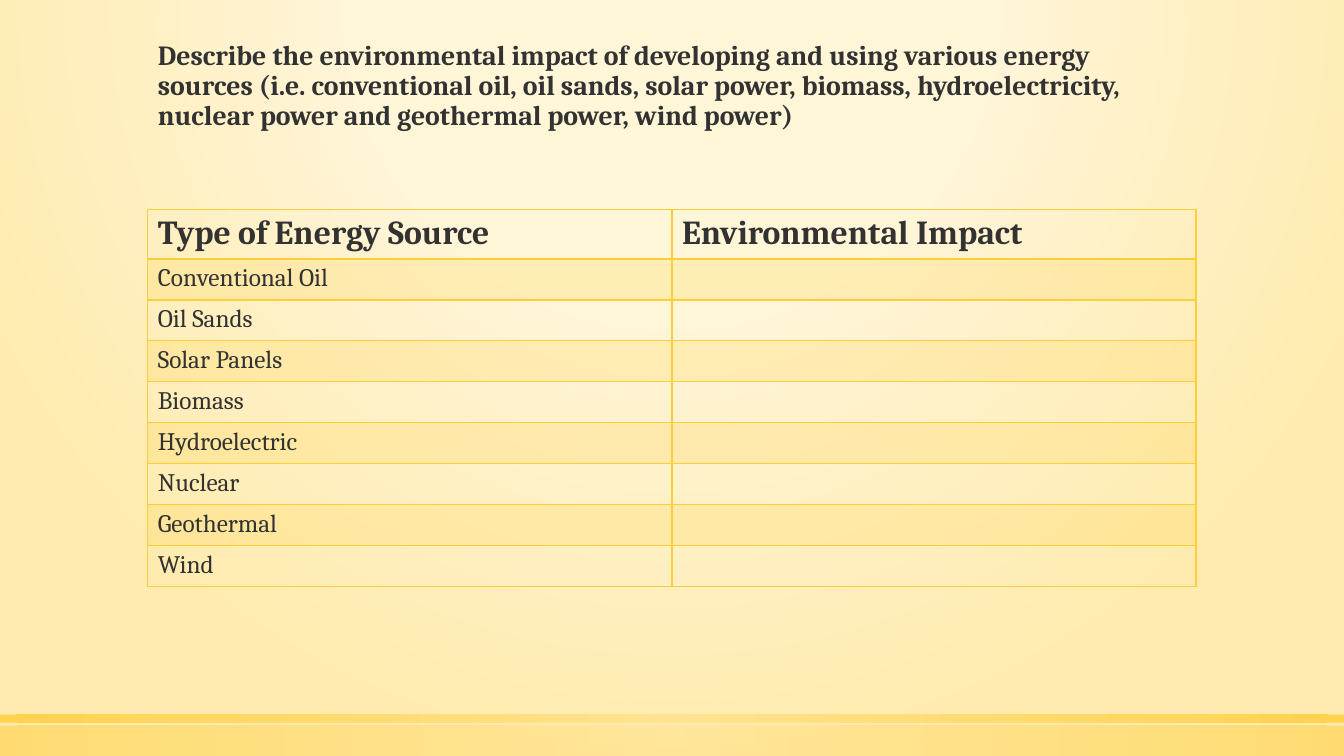
from lxml import etree
from pptx import Presentation
from pptx import util as u
from pptx.dml.color import RGBColor
from pptx.enum import shapes, text
from pptx.oxml.ns import qn

GOLD, PALE_GOLD, INK = "FFCD36", "FFE186", "323232"
CREAM, SAND = "FFF5D7", "FFEBAF"
TITLE = ("Describe the environmental impact of developing and using various energy "
         "sources (i.e. conventional oil, oil sands, solar power, biomass, "
         "hydroelectricity, nuclear power and geothermal power, wind power)")
HEADINGS = ["Type of Energy Source", "Environmental Impact"]
SOURCES = ["Conventional Oil", "Oil Sands", "Solar Panels", "Biomass",
           "Hydroelectric", "Nuclear", "Geothermal", "Wind"]


def rgb(colour):
    return RGBColor.from_string(colour)


def add_colour(parent, colour, alpha=100):
    element = etree.SubElement(parent, qn("a:srgbClr"), val=colour)
    if alpha < 100:
        etree.SubElement(element, qn("a:alpha"), val=str(alpha * 1000))


class EnergySlide:
    """Places elements on a grid of 100 columns by 100 rows."""

    font = "Cambria"

    def __init__(self, deck):
        self.deck = deck
        self.page = deck.slides.add_slide(deck.slide_layouts[5])

    def place(self, left, top, width, height):
        across, down = self.deck.slide_width / 100, self.deck.slide_height / 100
        return [round(length) for length in
                (left * across, top * down, width * across, height * down)]

    def style(self, para, size, bold=False):
        para.alignment = text.PP_ALIGN.LEFT
        for span in para.runs:
            span.font.name = self.font
            span.font.size = u.Pt(size)
            span.font.bold = bold
            span.font.color.rgb = rgb(INK)

    def radial(self, owner, stops, top=50, bottom=50):
        """Swap the solid fill of a properties element for a circular gradient."""
        gradient = etree.Element(qn("a:gradFill"), rotWithShape="1")
        stop_list = etree.SubElement(gradient, qn("a:gsLst"))
        for position, colour, alpha in stops:
            stop = etree.SubElement(stop_list, qn("a:gs"), pos=str(position * 1000))
            add_colour(stop, colour, alpha)
        circle = etree.SubElement(gradient, qn("a:path"), path="circle")
        etree.SubElement(circle, qn("a:fillToRect"), l="50000", t=str(top * 1000),
                         r="50000", b=str(bottom * 1000))
        owner.replace(owner.find(qn("a:solidFill")), gradient)

    def background(self):
        self.page.background.fill.solid()
        owner = self.page.element.find(".//" + qn("p:bgPr"))
        self.radial(owner, [(0, CREAM, 59), (40, CREAM, 66), (100, SAND, 100)], -80, 180)

    def band(self, top, height, alpha):
        box = self.page.shapes.add_shape(shapes.MSO_SHAPE.RECTANGLE,
                                         *self.place(0, top, 100, height))
        box.shadow.inherit = False
        box.line.fill.background()
        box.fill.solid()
        self.radial(box.element.spPr, [(0, PALE_GOLD, alpha), (100, GOLD, alpha)])

    def title(self, wording, *area):
        box = self.page.shapes.title
        box.left, box.top, box.width, box.height = self.place(*area)
        frame = box.text_frame
        frame.text = wording
        frame.word_wrap = True
        frame.auto_size = text.MSO_AUTO_SIZE.NONE
        frame.vertical_anchor = text.MSO_ANCHOR.BOTTOM
        frame.margin_top, frame.margin_bottom = 0, u.Inches(0.56)
        para = frame.paragraphs[0]
        para.line_spacing = 0.9
        self.style(para, 19.8, bold=True)

    def borders(self, cell, **widths):
        properties = cell._tc.get_or_add_tcPr()
        for side, width in widths.items():
            line = etree.SubElement(properties, qn("a:ln" + side), w=str(u.Pt(width)))
            add_colour(etree.SubElement(line, qn("a:solidFill")), GOLD)

    def table(self, rows, header_height, *area):
        left, top, width, height = self.place(*area)
        table = self.page.shapes.add_table(len(rows), len(rows[0]),
                                           left, top, width, height).table
        table.horz_banding = False
        header = u.Inches(header_height)
        for index, wordings in enumerate(rows):
            is_header = index == 0
            table.rows[index].height = (header if is_header else
                                        (height - header) // (len(rows) - 1))
            for column, wording in enumerate(wordings):
                cell = table.cell(index, column)
                cell.text = wording
                self.style(cell.text_frame.paragraphs[0], 24 if is_header else 18, is_header)
                self.borders(cell, L=1, R=1, T=2 if index == 1 else 1,
                             B=2 if is_header else 1)
                if index % 2:
                    cell.fill.solid()
                    cell.fill.fore_color.rgb = rgb(GOLD)
                    tint = cell._tc.tcPr.find(qn("a:solidFill"))[0]
                    etree.SubElement(tint, qn("a:alpha"), val="20000")
                else:
                    cell.fill.background()


def main():
    deck = Presentation()
    deck.slide_width, deck.slide_height = u.Inches(13.33), u.Inches(7.5)
    slide = EnergySlide(deck)
    slide.background()
    slide.band(96, 4, alpha=50)
    slide.band(94.53, 1.07, alpha=80)
    slide.title(TITLE, 11, 6.8, 78, 18)
    rows = [HEADINGS] + [[source, ""] for source in SOURCES]
    slide.table(rows, 0.49, 11, 27.73, 78, 49.87)
    deck.save("out.pptx")


if __name__ == "__main__":
    main()
